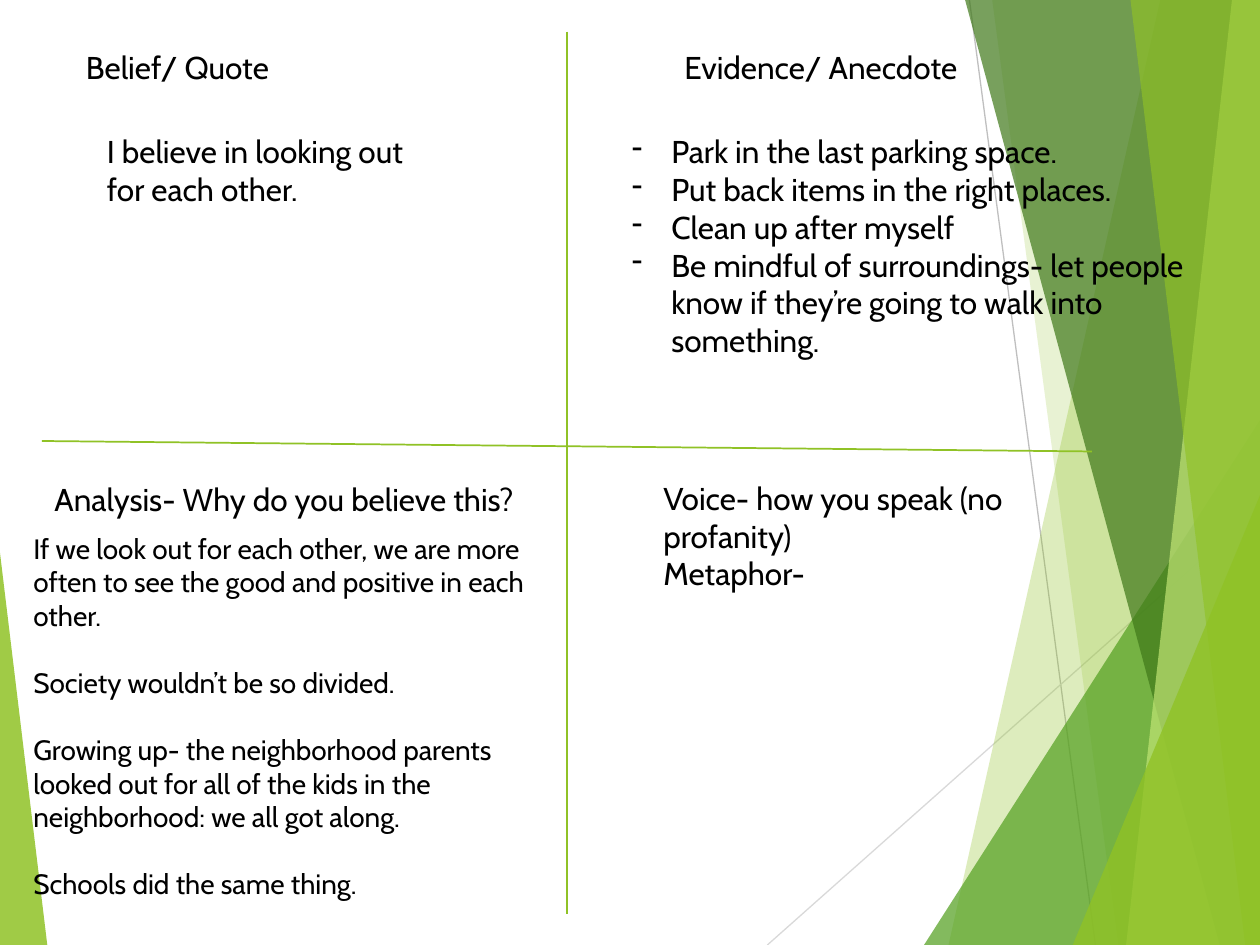
"""Build a four-part belief planner slide with green facets."""
from collections import namedtuple

from lxml.etree import SubElement
from pptx import Presentation
from pptx.dml.color import RGBColor
from pptx.enum.shapes import MSO_CONNECTOR, MSO_SHAPE
from pptx.oxml.ns import qn
from pptx.util import Pt

Theme = namedtuple("Theme", "font ink lime leaf moss pale grey mist head body")
theme = Theme("Cabin", "000000", "90C226", "54A021", "3F7819", "C0E474",
              "BFBFBF", "D9D9D9", 18, 16)

deck = Presentation()
deck.slide_width, deck.slide_height = Pt(720), Pt(540)
slide = deck.slides.add_slide(deck.slide_layouts[6])
shapes = slide.shapes


def add_text(text, left, top, width, height, size=theme.head, gap=0, bullet=None):
    frame = shapes.add_textbox(Pt(left), Pt(top), Pt(width), Pt(height)).text_frame
    frame.word_wrap = True
    for pos, line in enumerate(text.split("\n")):
        para = frame.add_paragraph() if pos else frame.paragraphs[0]
        para.space_before = Pt(gap if pos else 0)
        run = para.add_run()
        run.text = line
        run.font.name = theme.font
        run.font.size = Pt(size)
        run.font.color.rgb = RGBColor.from_string(theme.ink)
        if bullet:
            props = para._p.get_or_add_pPr()
            props.set("marL", str(Pt(22.5)))
            props.set("indent", str(Pt(-22.5)))
            SubElement(props, qn("a:buChar")).set("char", bullet)


def add_line(x1, y1, x2, y2, color, width):
    line = shapes.add_connector(MSO_CONNECTOR.STRAIGHT, Pt(x1), Pt(y1), Pt(x2), Pt(y2))
    line.line.color.rgb = RGBColor.from_string(color)
    line.line.width = Pt(width)
    SubElement(line._element.spPr, qn("a:effectLst"))


add_line(554, 0, 626, 540, theme.grey, 0.75)
add_line(720, 290, 438.5, 540, theme.mist, 0.75)

facets = [
    ("band", (663, 542), theme.lime, 30),
    ("band", (567, 639), theme.lime, 20),
    ("wedge", (528, 240, 192, 1), theme.leaf, 72),
    ("band", (551.5, 697), theme.moss, 70),
    ("band", (704, 643.5), theme.pale, 70),
    ("band", (646, 711.5), theme.lime, 65),
    ("wedge", (613, 283, 107, 1), theme.lime, 80),
    ("wedge", (0, 316, 27, 0), theme.lime, 85),
]
for kind, place, color, alpha in facets:
    if kind == "band":
        top, foot = place
        pen = shapes.build_freeform(Pt(top), Pt(0))
        pen.add_line_segments([(Pt(720), Pt(0)), (Pt(720), Pt(540)), (Pt(foot), Pt(540))])
        facet = pen.convert_to_shape()
    else:
        left, top, width, peak = place
        facet = shapes.add_shape(MSO_SHAPE.ISOSCELES_TRIANGLE,
                                 Pt(left), Pt(top), Pt(width), Pt(540 - top))
        facet.adjustments[0] = peak
    facet.shadow.inherit = False
    facet.line.fill.background()
    facet.fill.solid()
    facet.fill.fore_color.rgb = RGBColor.from_string(color)
    tint = facet._element.spPr.find(qn("a:solidFill"))[0]
    SubElement(tint, qn("a:alpha")).set("val", str(alpha * 1000))

add_line(324, 18, 324, 522, theme.lime, 1)
add_line(24, 252, 624, 258, theme.lime, 1)

add_text("Belief/ Quote", 42, 24, 216, 30)
add_text("Evidence/ Anecdote", 384, 24, 216, 30)
add_text("Analysis- Why do you believe this?", 24, 270.5, 300, 29)
add_text("Voice- how you speak (no profanity)\nMetaphor-", 372, 270, 216, 73)
add_text("If we look out for each other, we are more often to see the good and "
         "positive in each other.\n"
         "Society wouldn’t be so divided.\n"
         "Growing up- the neighborhood parents looked out for all of the kids in "
         "the neighborhood: we all got along.\n"
         "Schools did the same thing.",
         12, 300, 312, 225, size=theme.body, gap=19.2)
add_text("I believe in looking out for each other.", 54, 72, 186, 51)
add_text("Park in the last parking space.\n"
         "Put back items in the right places.\n"
         "Clean up after myself\n"
         "Be mindful of surroundings- let people know if they’re going to walk "
         "into something.",
         354, 72, 342, 138, bullet="-")

deck.save("out.pptx")
